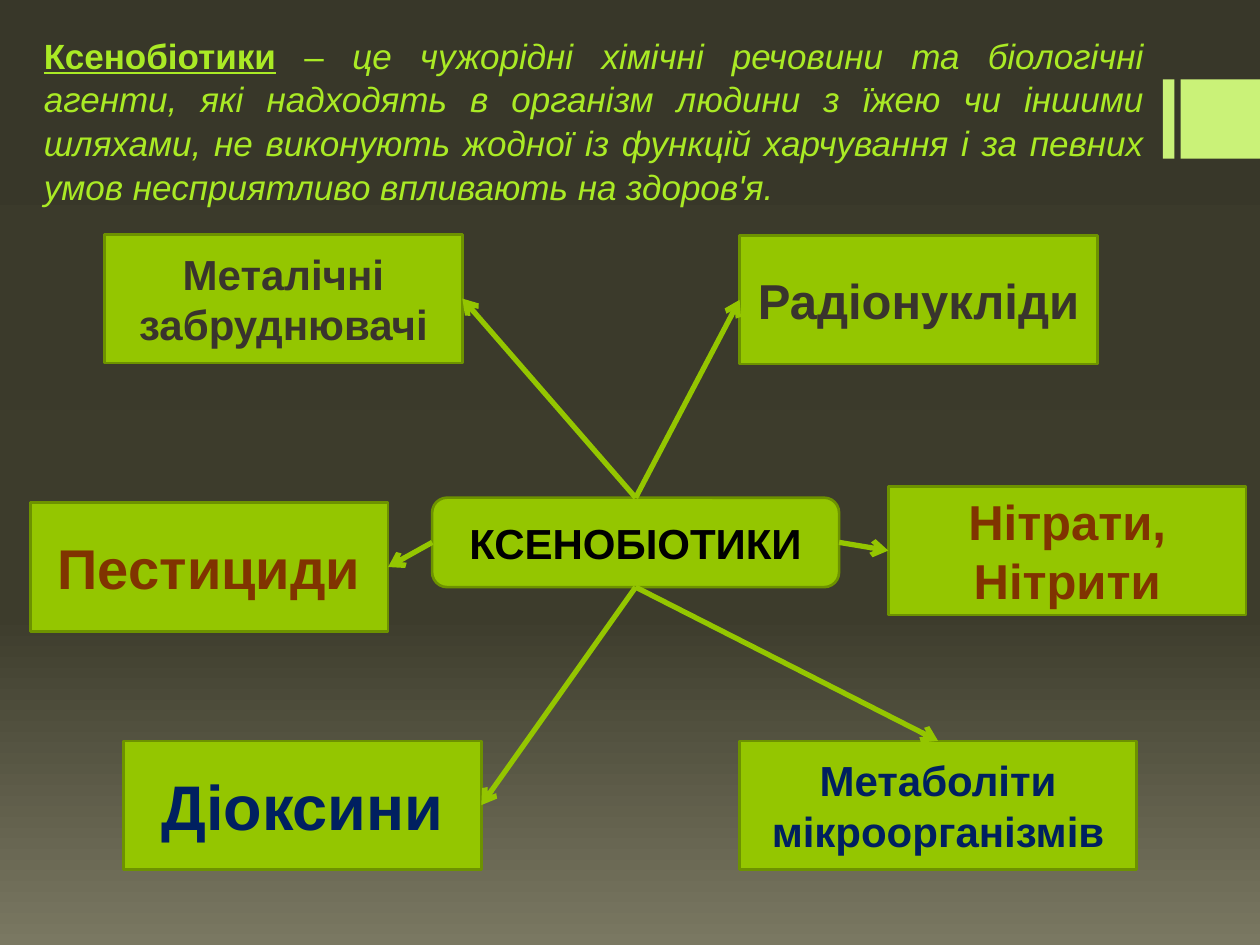
from copy import deepcopy

from lxml.etree import SubElement
from pptx import Presentation
from pptx.dml.color import RGBColor
from pptx.enum.shapes import MSO_CONNECTOR, MSO_SHAPE
from pptx.enum.text import MSO_ANCHOR, PP_ALIGN
from pptx.oxml.ns import qn
from pptx.util import Inches, Pt

GREEN = RGBColor(0x94, 0xC6, 0x00)
DARK_GREEN = RGBColor(0x6D, 0x92, 0x00)
LIGHT_GREEN = RGBColor(0xCA, 0xF2, 0x78)
TEXT_GREEN = RGBColor(0xAA, 0xEA, 0x25)
BLACK = RGBColor(0x00, 0x00, 0x00)
CHARCOAL = RGBColor(0x39, 0x34, 0x2D)
NAVY = RGBColor(0x00, 0x20, 0x60)
BROWN = RGBColor(0x80, 0x34, 0x00)
BACKGROUND = [
    (0, RGBColor(0x38, 0x37, 0x29)),
    (0.65, RGBColor(0x3D, 0x3C, 0x2C)),
    (1, RGBColor(0x7A, 0x78, 0x62)),
]

FONT = "Arial"
BOX_WIDTH, BOX_HEIGHT = 2.84, 1.02
TOP, LEFT, BOTTOM, RIGHT = range(4)

# text, left, top, width, size, colour, side of the centre box, side of this box
GROUPS = [
    ("Металічні забруднювачі", 0.83, 1.86, BOX_WIDTH, 24, CHARCOAL, TOP, RIGHT),
    ("Радіонукліди", 5.87, 1.87, BOX_WIDTH, 28, CHARCOAL, TOP, LEFT),
    ("Діоксини", 0.98, 5.88, BOX_WIDTH, 36, NAVY, BOTTOM, RIGHT),
    ("Метаболіти мікроорганізмів", 5.87, 5.88, 3.15, 24, NAVY, BOTTOM, TOP),
    ("Пестициди", 0.24, 3.99, BOX_WIDTH, 32, BROWN, LEFT, RIGHT),
    ("Нітрати,\nНітрити", 7.05, 3.86, BOX_WIDTH, 28, BROWN, RIGHT, LEFT),
]

DEFINITION = [
    ("Ксенобіотики", True, False),
    (" – ", False, False),
    ("це чужорідні хімічні речовини та біологічні агенти, які надходять в "
     "організм людини з їжею чи іншими шляхами, не виконують жодної із функцій "
     "харчування і за певних умов несприятливо впливають на здоров'я.", False, True),
]


def paint_background(page):
    fill = page.background.fill
    fill.gradient()
    fill.gradient_angle = 270
    stop_list = page.element.find(".//" + qn("a:gsLst"))
    stop_list.append(deepcopy(stop_list[-1]))
    for stop, (position, color) in zip(fill.gradient_stops, BACKGROUND):
        stop.position = position
        stop.color.rgb = color


def add_block(page, kind, left, top, width, height, color):
    """Add a filled shape without outline or shadow."""
    block = page.shapes.add_shape(
        kind, Inches(left), Inches(top), Inches(width), Inches(height))
    block.shadow.inherit = False
    block.fill.solid()
    block.fill.fore_color.rgb = color
    block.line.fill.background()
    return block


def add_label_box(page, kind, text, left, top, width, height, size, color):
    box = add_block(page, kind, left, top, width, height, GREEN)
    box.line.color.rgb = DARK_GREEN
    box.line.width = Pt(1.5)
    frame = box.text_frame
    frame.text = text
    frame.word_wrap = True
    frame.vertical_anchor = MSO_ANCHOR.MIDDLE
    for para in frame.paragraphs:
        para.alignment = PP_ALIGN.CENTER
        para.font.name = FONT
        para.font.size = Pt(size)
        para.font.bold = True
        para.font.color.rgb = color
    return box


def add_arrow(page, start, start_side, end, end_side):
    arrow = page.shapes.add_connector(MSO_CONNECTOR.STRAIGHT, 0, 0, 0, 0)
    arrow.begin_connect(start, start_side)
    arrow.end_connect(end, end_side)
    arrow.line.color.rgb = GREEN
    arrow.line.width = Pt(3)
    SubElement(arrow.line._get_or_add_ln(), qn("a:tailEnd"), type="arrow")
    SubElement(arrow._element.spPr, qn("a:effectLst"))


def add_definition(page):
    box = page.shapes.add_textbox(
        Inches(0.2), Inches(0.21), Inches(8.98), Inches(7.01))
    box.text_frame.word_wrap = True
    para = box.text_frame.paragraphs[0]
    para.alignment = PP_ALIGN.JUSTIFY
    para.line_spacing = 1.04
    para._p.get_or_add_pPr().set("marL", str(Inches(0.05)))
    for text, is_term, italic in DEFINITION:
        span = para.add_run()
        span.text = text
        span.font.name = FONT
        span.font.size = Pt(20)
        span.font.color.rgb = TEXT_GREEN
        span.font.bold = is_term
        span.font.underline = is_term
        span.font.italic = italic


def main():
    deck = Presentation()
    deck.slide_width, deck.slide_height = Inches(10), Inches(7.5)
    page = deck.slides.add_slide(deck.slide_layouts[6])
    paint_background(page)
    for left, width in ((9.23, 0.09), (9.37, 0.63)):
        add_block(page, MSO_SHAPE.RECTANGLE, left, 0.63, width, 0.63, LIGHT_GREEN)
    add_definition(page)

    center = add_label_box(page, MSO_SHAPE.ROUNDED_RECTANGLE, "КСЕНОБІОТИКИ",
                           3.43, 3.95, 3.23, 0.71, 24, BLACK)
    links = []
    for text, left, top, width, size, color, center_side, side in GROUPS:
        box = add_label_box(page, MSO_SHAPE.RECTANGLE, text,
                            left, top, width, BOX_HEIGHT, size, color)
        links.append((center_side, box, side))
    for center_side, box, side in links:
        add_arrow(page, center, center_side, box, side)

    deck.save("out.pptx")


if __name__ == "__main__":
    main()
